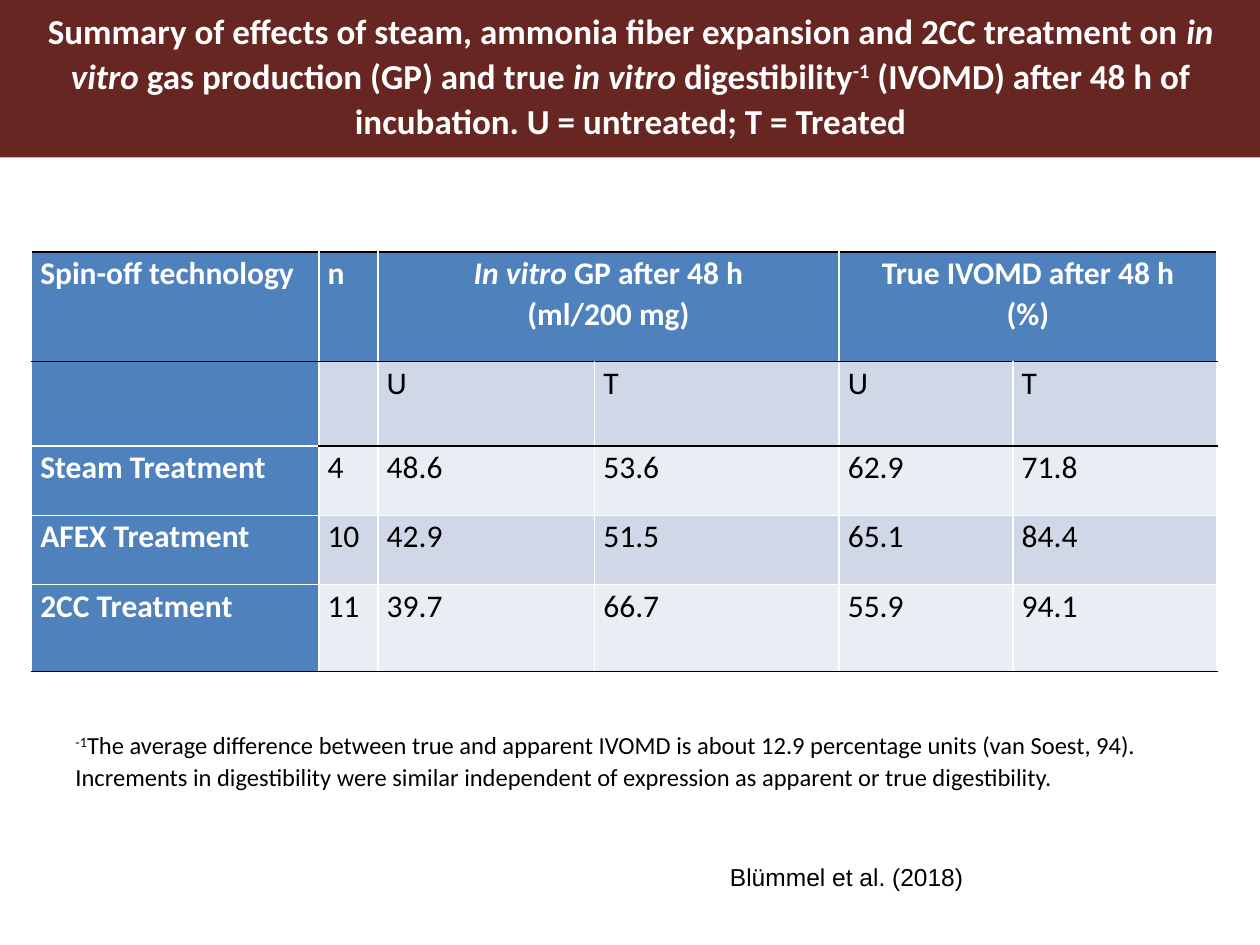
"""Builds a slide that tabulates treatment effects on in vitro gas production and digestibility."""
from lxml import etree
from pptx import Presentation
from pptx import util as u
from pptx.dml.color import RGBColor
from pptx.enum import shapes, text
from pptx.oxml.ns import qn

COLORS = {"banner": "682622", "header": "4F81BD", "dark_band": "D0D8E8",
          "light_band": "E9EDF4", "white": "FFFFFF", "black": "000000"}

HEADING = [[("Summary of effects of steam, ammonia fiber expansion and 2CC treatment on ", ""),
            ("in vitro", "italic"), (" gas production (GP) and true ", ""),
            ("in vitro", "italic"), (" digestibility", ""), ("-1", "super"),
            (" (IVOMD) after 48 h of incubation. U = untreated; T = Treated", "")]]
HEADER = {
    0: [[("Spin-off technology", "")]],
    1: [[("n", "")]],
    2: [[("In vitro ", "italic"), ("GP after 48 h", "")], [("(ml/200 mg)", "")]],
    4: [[("True IVOMD after 48 h", "")], [("(%)", "")]],
}
ROWS = [
    ("", "", "U", "T", "U", "T"),
    ("Steam Treatment", "4", "48.6", "53.6", "62.9", "71.8"),
    ("AFEX Treatment", "10", "42.9", "51.5", "65.1", "84.4"),
    ("2CC Treatment", "11", "39.7", "66.7", "55.9", "94.1"),
]
FOOTNOTE = [[("-1", "super"),
             ("The average difference between true and apparent IVOMD is about 12.9 percentage "
              "units (van Soest, 94). Increments in digestibility were similar independent of "
              "expression as apparent or true digestibility.", "")]]
CITATION = [[("Blümmel et al. (2018)", "")]]

COL_WIDTHS = [2.28, 0.47, 1.72, 1.94, 1.38, 1.62]
ROW_HEIGHTS = [0.87, 0.67, 0.55, 0.55, 0.69]


def rgb(name):
    return RGBColor.from_string(COLORS[name])


def write(frame, paragraphs, size=18, font="Calibri", color="black", bold=False,
          align=text.PP_ALIGN.LEFT, spacing=1.07, after=0):
    for index, runs in enumerate(paragraphs):
        para = frame.add_paragraph() if index else frame.paragraphs[0]
        para.alignment, para.line_spacing = align, spacing
        para.space_before, para.space_after = u.Pt(0), u.Pt(after)
        para.font.size = u.Pt(size)
        for words, style in runs:
            run = para.add_run()
            run.text = words
            run.font.size, run.font.name = u.Pt(size), font
            run.font.bold, run.font.italic = bold, style == "italic"
            run.font.color.rgb = rgb(color)
            if style == "super":
                run.font._element.set("baseline", "30000")


def place(shape, left, top, width, height):
    shape.left, shape.top = u.Inches(left), u.Inches(top)
    shape.width, shape.height = u.Inches(width), u.Inches(height)


def fit(frame, wrap=True):
    frame.word_wrap = wrap
    frame.vertical_anchor = text.MSO_ANCHOR.TOP
    frame.auto_size = text.MSO_AUTO_SIZE.SHAPE_TO_FIT_TEXT


def add_note(slide, box, paragraphs, wrap=True, **style):
    note = slide.shapes.add_textbox(*map(u.Inches, box))
    fit(note.text_frame, wrap)
    write(note.text_frame, paragraphs, size=14, **style)


def paint_cell(cell, fill, top, bottom):
    cell.fill.solid()
    cell.fill.fore_color.rgb = rgb(fill)
    cell.margin_left = cell.margin_right = u.Inches(0.07)
    cell.margin_top = cell.margin_bottom = 0
    edges = (("a:lnL", "white"), ("a:lnR", "white"), ("a:lnT", top), ("a:lnB", bottom))
    for index, (tag, color) in enumerate(edges):
        line = etree.Element(qn(tag), w=str(u.Pt(1)))
        solid = etree.SubElement(line, qn("a:solidFill"))
        etree.SubElement(solid, qn("a:srgbClr"), val=COLORS[color])
        cell._tc.get_or_add_tcPr().insert(index, line)


def rule_below(row, col):
    if row in (-1, 0, len(ROWS)) or (row == 1 and col > 0):
        return "black"
    return "white"


def add_results(slide):
    results = slide.shapes.add_table(
        len(ROW_HEIGHTS), len(COL_WIDTHS), u.Inches(0.25), u.Inches(2),
        u.Inches(sum(COL_WIDTHS)), u.Inches(sum(ROW_HEIGHTS))).table
    for column, width in zip(results.columns, COL_WIDTHS):
        column.width = u.Inches(width)
    for row, height in enumerate(ROW_HEIGHTS):
        results.rows[row].height = u.Inches(height)
        for col in range(len(COL_WIDTHS)):
            cell = results.cell(row, col)
            is_label = row == 0 or col == 0
            band = "dark_band" if row % 2 else "light_band"
            paint_cell(cell, "header" if is_label else band,
                       rule_below(row - 1, col), rule_below(row, col))
            content = HEADER.get(col, []) if row == 0 else [[(ROWS[row - 1][col], "")]]
            centred = row == 0 and col > 1
            write(cell.text_frame, content, bold=is_label,
                  color="white" if is_label else "black",
                  align=text.PP_ALIGN.CENTER if centred else text.PP_ALIGN.LEFT)
    for col in (2, 4):
        results.cell(0, col).merge(results.cell(0, col + 1))


def main():
    deck = Presentation()
    deck.slide_width, deck.slide_height = u.Inches(10), u.Inches(7.5)
    slide = deck.slides.add_slide(deck.slide_layouts[5])

    banner = slide.shapes.add_shape(shapes.MSO_SHAPE.RECTANGLE, 0, 0,
                                    deck.slide_width, u.Inches(1.25))
    banner.shadow.inherit = False
    banner.fill.solid()
    banner.fill.fore_color.rgb = rgb("banner")
    banner.line.fill.background()
    slide.shapes._spTree.insert(2, banner._element)

    heading = slide.shapes.title
    place(heading, 0.17, 0, 9.67, 1.18)
    fit(heading.text_frame)
    write(heading.text_frame, HEADING, size=20, color="white", bold=True,
          align=text.PP_ALIGN.CENTER, after=8)

    add_results(slide)
    add_note(slide, (0.5, 5.73, 9.42, 0.61), FOOTNOTE, after=8)
    add_note(slide, (5.69, 6.58, 2.06, 0.55), CITATION, wrap=False, font="Arial",
             align=text.PP_ALIGN.CENTER, spacing=u.Pt(32))
    deck.save("out.pptx")


if __name__ == "__main__":
    main()
